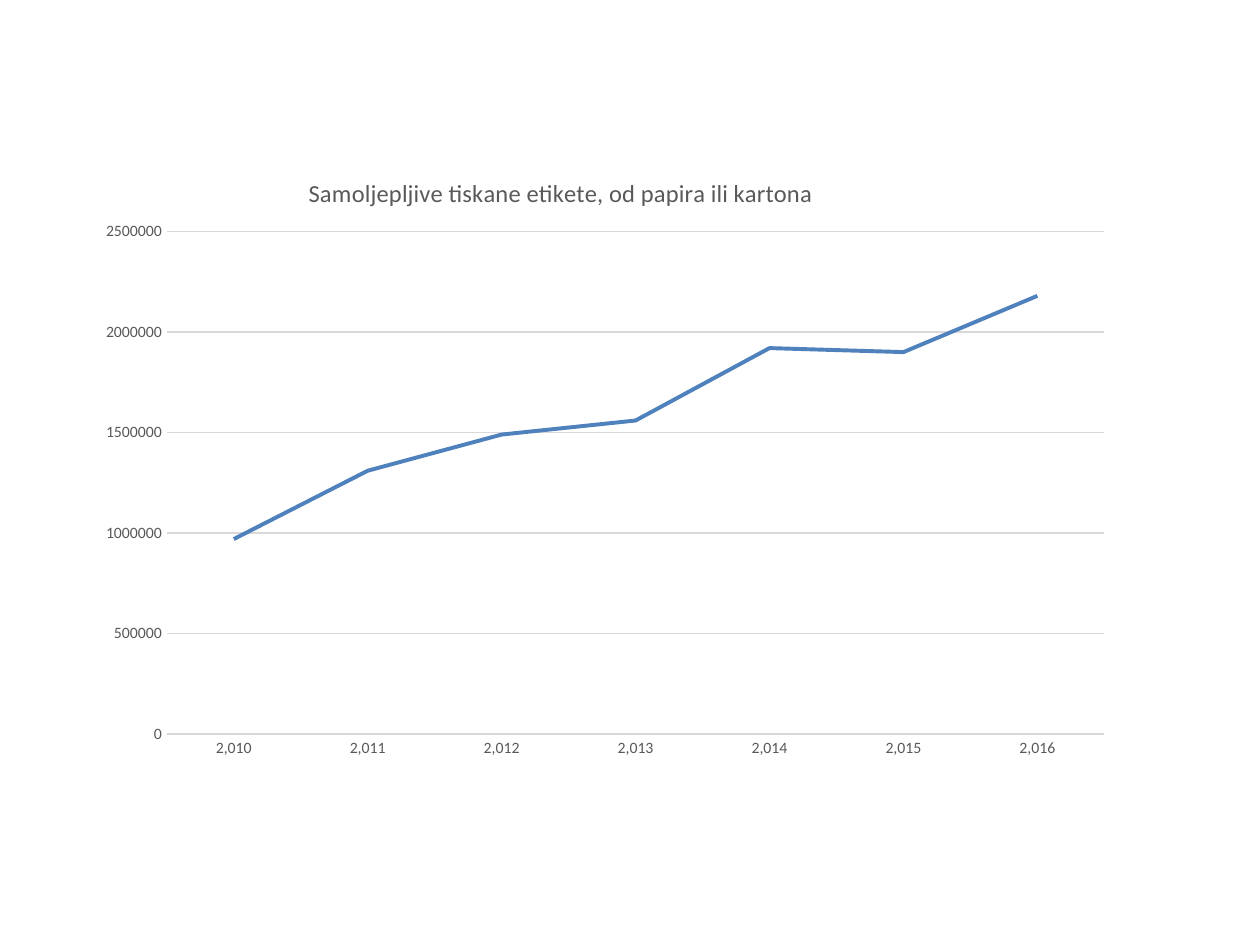
from dataclasses import dataclass

from lxml import etree
from pptx import Presentation
from pptx import util as u
from pptx.chart import data as chart_data
from pptx.dml import color
from pptx.enum import chart as ch
from pptx.oxml import ns

TITLE = "Samoljepljive tiskane etikete, od papira ili kartona"
GREY, LIGHT, BLUE = "595959", "D9D9D9", "4F81BD"
YEARS = range(2010, 2017)
LABELS_SOLD = (970000, 1310000, 1490000, 1560000, 1920000, 1900000, 2180000)


@dataclass
class Placement:
    """Position of a chart part as fractions of the chart."""
    x: float
    y: float
    w: float = 0
    h: float = 0


def rgb(code: str) -> color.RGBColor:
    """Turn a hex string into a colour."""
    return color.RGBColor.from_string(code)


def style_font(font, size: float, code: str) -> None:
    """Set the typeface, size and colour of a font."""
    font.name, font.size, font.bold = "Calibri", u.Pt(size), False
    font.color.rgb = rgb(code)


def style_line(line, width: float, code: str) -> None:
    """Set the width and colour of a line."""
    line.width = u.Pt(width)
    line.color.rgb = rgb(code)


def place(part, index: int, placement: Placement) -> None:
    """Give a chart part a manual layout as its child at the index."""
    for old in part.findall(ns.qn("c:layout")):
        part.remove(old)
    layout = etree.Element(ns.qn("c:layout"))
    manual = etree.SubElement(layout, ns.qn("c:manualLayout"))
    settings = {"xMode": "edge", "yMode": "edge", "x": placement.x, "y": placement.y}
    if placement.w:
        settings = {"layoutTarget": "inner", **settings, "w": placement.w, "h": placement.h}
    for tag, value in settings.items():
        etree.SubElement(manual, ns.qn(f"c:{tag}")).set("val", str(value))
    part.insert(index, layout)


def style_axis(axis, number_format: str) -> None:
    """Format the labels and ticks of an axis."""
    axis.major_tick_mark = axis.minor_tick_mark = ch.XL_TICK_MARK.NONE
    axis.tick_labels.number_format = number_format
    axis.tick_labels.number_format_is_linked = False
    style_font(axis.tick_labels.font, 9, GREY)


def add_sales_chart(slide) -> None:
    """Draw the line chart of label sales by year."""
    sales = chart_data.CategoryChartData(number_format="0")
    sales.categories = YEARS
    sales.categories.number_format = "#,##0"
    sales.add_series(TITLE, LABELS_SOLD)
    chart = slide.shapes.add_chart(
        ch.XL_CHART_TYPE.LINE, u.Pt(49), u.Pt(83.5), u.Pt(594), u.Pt(356.4), sales
    ).chart
    style_font(chart.font, 10, "000000")
    chart.has_legend = False

    heading = chart.chart_title.text_frame
    heading.text = TITLE
    style_font(heading.paragraphs[0].runs[0].font, 14, GREY)
    place(chart.chart_title._element, 1, Placement(0.21, 0.04))
    plot_area = chart._chartSpace.chart.plotArea
    place(plot_area, 0, Placement(0.078, 0.137, 0.902, 0.806))

    years, amounts = chart.category_axis, chart.value_axis
    style_axis(years, "#,##0")
    style_axis(amounts, "0")
    style_line(years.format.line, 0.75, LIGHT)
    amounts.format.line.fill.background()
    style_line(amounts.major_gridlines.format.line, 0.75, LIGHT)
    amounts.minimum_scale, amounts.maximum_scale = 0, 2500000
    amounts.major_unit = 500000

    chart.plots[0].vary_by_categories = False
    trend = chart.plots[0].series[0]
    trend.smooth = False
    trend.marker.style = ch.XL_MARKER_STYLE.NONE
    style_line(trend.format.line, 2.25, BLUE)


def main() -> None:
    """Build and save the slide."""
    deck = Presentation()
    deck.slide_width, deck.slide_height = u.Pt(720), u.Pt(540)
    add_sales_chart(deck.slides.add_slide(deck.slide_layouts[6]))
    deck.save("out.pptx")


if __name__ == "__main__":
    main()
